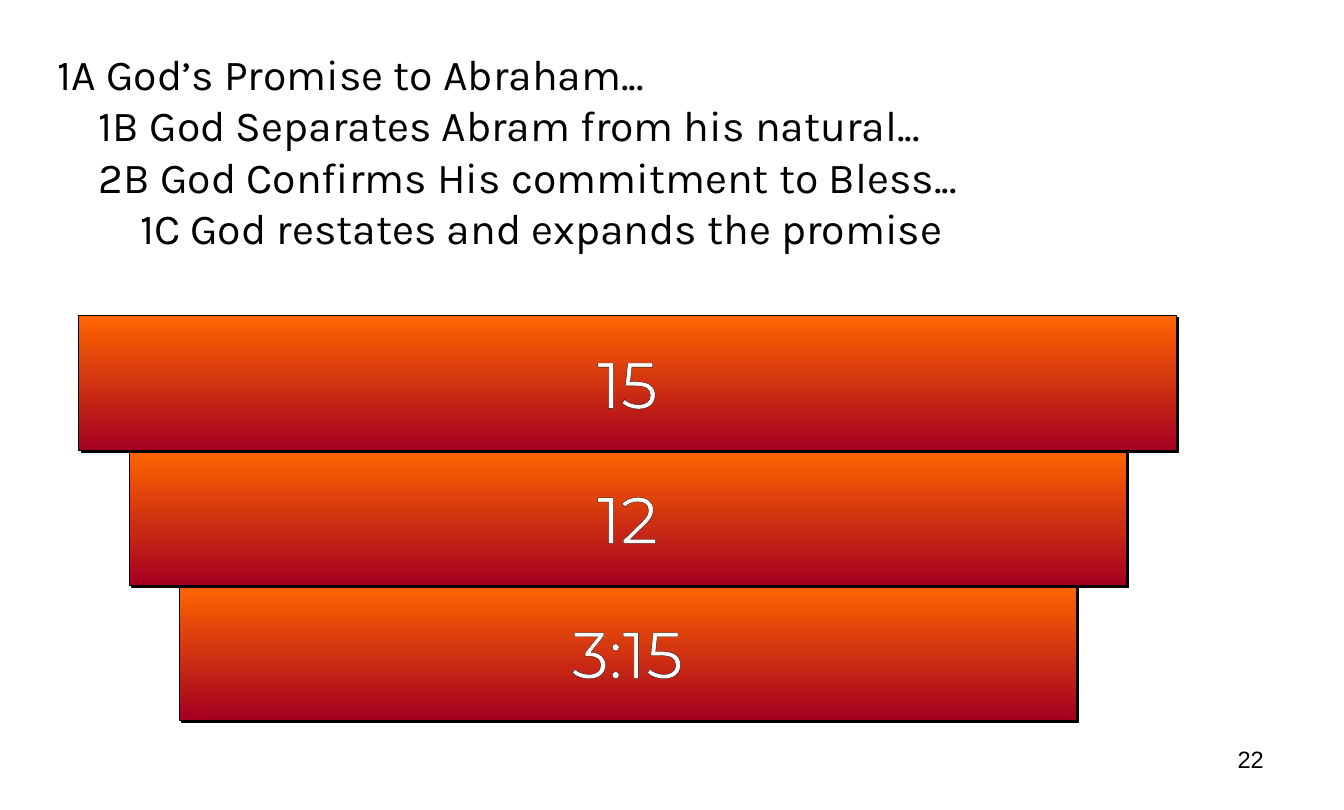
"""Build the outline slide with three stacked, narrowing passage bars."""
from lxml.etree import SubElement
from pptx import Presentation
from pptx.dml.color import RGBColor
from pptx.enum.shapes import MSO_SHAPE
from pptx.enum.text import MSO_ANCHOR, PP_ALIGN
from pptx.oxml import parse_xml
from pptx.oxml.ns import qn
from pptx.util import Inches, Pt

BLACK = RGBColor(0x00, 0x00, 0x00)
WHITE = RGBColor(0xFF, 0xFF, 0xFF)
ORANGE = RGBColor(0xFF, 0x66, 0x00)
CRIMSON = RGBColor(0xA5, 0x00, 0x21)

OUTLINE = [
    (0, "1A God’s Promise to Abraham..."),
    (1, "1B God Separates Abram from his natural..."),
    (1, "2B God Confirms His commitment to Bless..."),
    (2, "1C God restates and expands the promise"),
]
PASSAGES = ["15", "12", "3:15"]
PAGE_NUMBER = "22"

INDENT = 0.51
BAR_LEFT, BAR_TOP, BAR_WIDTH, BAR_HEIGHT = 0.97, 3.89, 13.56, 1.665
BAR_STEP = 0.62

OUTLINE_FONT = {"name": "Karla", "size": Pt(38)}
BAR_FONT = {"name": "Montserrat", "size": Pt(58)}
NUMBER_FONT = {"name": "Arial", "size": Pt(21)}
FRAME = {
    "word_wrap": True,
    "margin_left": Inches(0.16),
    "margin_right": Inches(0.16),
    "margin_top": Inches(0.08),
    "margin_bottom": Inches(0.08),
}
TEXT_OUTLINE = (
    '<a:ln xmlns:a="http://schemas.openxmlformats.org/drawingml/2006/main" w="9525">'
    '<a:solidFill><a:srgbClr val="000000"/></a:solidFill></a:ln>'
)


def apply(target, values):
    for name, value in values.items():
        setattr(target, name, value)


def write(p, text, font, color, align=PP_ALIGN.LEFT):
    p.alignment = align
    r = p.add_run()
    r.text = text
    apply(r.font, font)
    r.font.color.rgb = color
    return r


def add_text_frame(s, left, top, width, height):
    box = s.shapes.add_textbox(*map(Inches, (left, top, width, height)))
    apply(box.text_frame, FRAME)
    return box.text_frame


def add_shadow(sp):
    sp.shadow.inherit = False
    effects = sp._element.spPr.find(qn("a:effectLst"))
    shadow = SubElement(effects, qn("a:outerShdw"), blurRad="0",
                        dist=str(Pt(2.8)), dir="2700000", algn="ctr", rotWithShape="0")
    SubElement(shadow, qn("a:srgbClr"), val=str(BLACK))


def add_bar(s, index, text):
    inset = index * BAR_STEP
    sp = s.shapes.add_shape(
        MSO_SHAPE.RECTANGLE, Inches(BAR_LEFT + inset), Inches(BAR_TOP + index * BAR_HEIGHT),
        Inches(BAR_WIDTH - 2 * inset), Inches(BAR_HEIGHT))
    sp.fill.gradient()
    sp.fill.gradient_angle = 270
    for stop, position, color in zip(sp.fill.gradient_stops, (0, 1), (ORANGE, CRIMSON)):
        stop.position = position
        stop.color.rgb = color
    sp.line.color.rgb = BLACK
    sp.line.width = Pt(0.25)
    add_shadow(sp)
    tf = sp.text_frame
    tf.vertical_anchor = MSO_ANCHOR.MIDDLE
    r = write(tf.paragraphs[0], text, BAR_FONT, WHITE, PP_ALIGN.CENTER)
    r._r.get_or_add_rPr().insert(0, parse_xml(TEXT_OUTLINE))


def main():
    prs = Presentation()
    prs.slide_width, prs.slide_height = Inches(16.6), Inches(10)
    s = prs.slides.add_slide(prs.slide_layouts[6])

    tf = add_text_frame(s, 11.9, 9.11, 3.87, 0.69)
    write(tf.paragraphs[0], PAGE_NUMBER, NUMBER_FONT, BLACK, PP_ALIGN.RIGHT)

    tf = add_text_frame(s, 0.55, 0.51, 15.36, 2.72)
    for i, (level, text) in enumerate(OUTLINE):
        p = tf.add_paragraph() if i else tf.paragraphs[0]
        p._p.get_or_add_pPr().set("marL", str(Inches(level * INDENT)))
        write(p, text, OUTLINE_FONT, BLACK)

    for i, text in reversed(list(enumerate(PASSAGES))):
        add_bar(s, i, text)

    prs.save("out.pptx")


if __name__ == "__main__":
    main()
